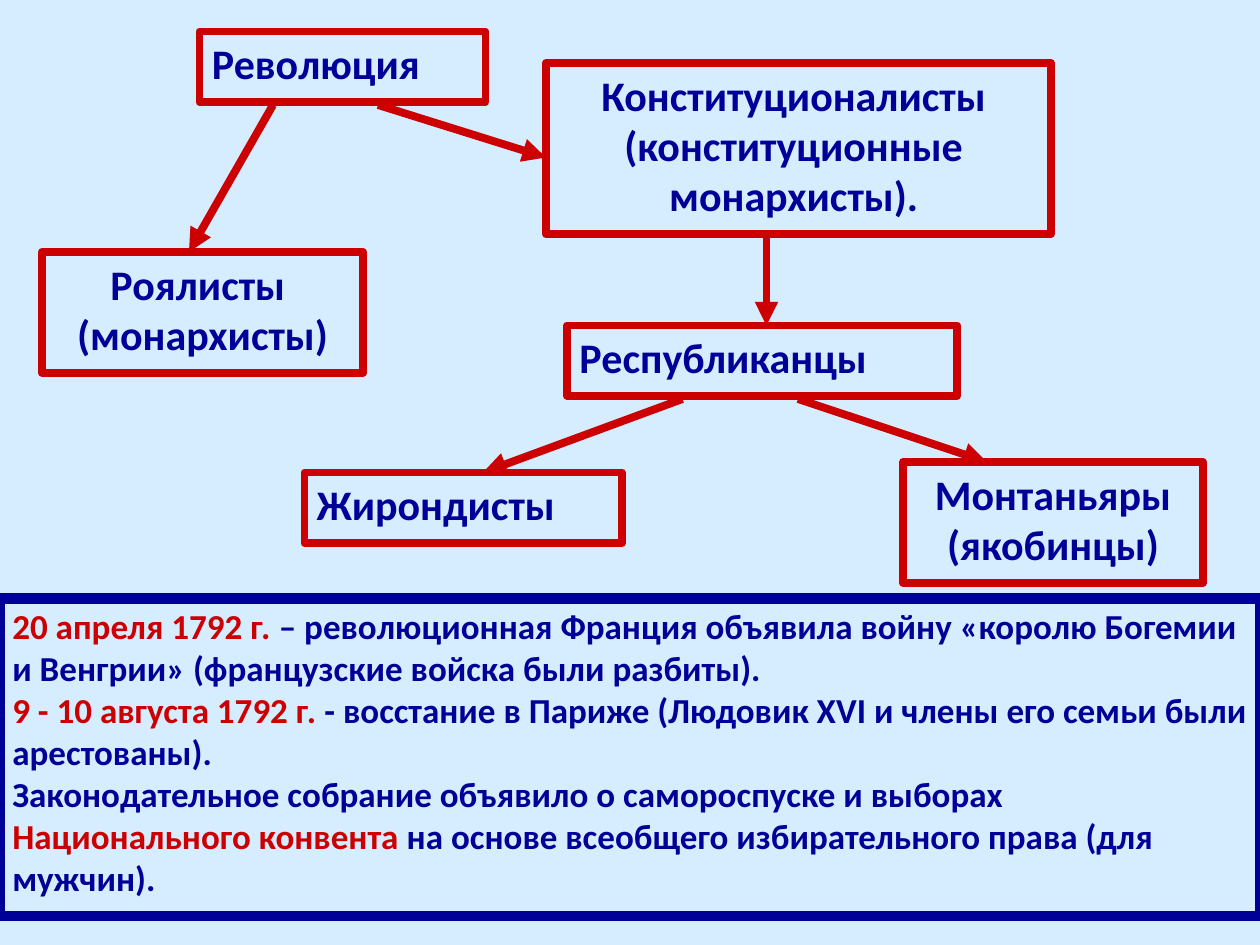
from dataclasses import dataclass

from lxml import etree
from pptx import Presentation
from pptx.dml.color import RGBColor
from pptx.enum.shapes import MSO_CONNECTOR, MSO_SHAPE
from pptx.enum.text import MSO_ANCHOR, PP_ALIGN
from pptx.oxml.ns import qn
from pptx.slide import Slide
from pptx.util import Pt

RECTANGLE = MSO_SHAPE.RECTANGLE
STRAIGHT = MSO_CONNECTOR.STRAIGHT
TOP = MSO_ANCHOR.TOP
LEFT, CENTER = PP_ALIGN.LEFT, PP_ALIGN.CENTER

SKY = RGBColor(0xD6, 0xEC, 0xFF)
NAVY = RGBColor(0x00, 0x00, 0x99)
RED = RGBColor(0xCC, 0x00, 0x00)

FONT = "Calibri"
BLANK_LAYOUT = 6
LINE_WIDTH = 4.5
LINE_HEIGHT = 28.8
BOX_PADDING = 11.5


@dataclass(frozen=True)
class TextRun:
    text: str
    color: RGBColor = NAVY


@dataclass(frozen=True)
class Box:
    left: float
    top: float
    width: float
    lines: tuple[str, ...]

    @property
    def height(self) -> float:
        return BOX_PADDING + LINE_HEIGHT * len(self.lines)


@dataclass(frozen=True)
class Arrow:
    start: tuple[float, float]
    end: tuple[float, float]


PARTIES = (
    Box(114, 18, 163.5, ("Революция",)),
    Box(24, 144, 183.5, ("Роялисты ", "(монархисты)")),
    Box(312, 36, 288.5,
        ("Конституционалисты ", "(конституционные ", "монархисты). ")),
    Box(324, 186, 223, ("Республиканцы",)),
    Box(174, 270, 181.5, ("Жирондисты",)),
    Box(516, 264, 171.5, ("Монтаньяры", "(якобинцы)")),
)

ARROWS = (
    Arrow((156, 60), (108, 144)),
    Arrow((216, 60), (312, 90)),
    Arrow((438, 132), (438, 186)),
    Arrow((390, 228), (276, 270)),
    Arrow((456, 228), (564, 264)),
)

EVENTS = (
    (TextRun("20 апреля 1792 г.", RED),
     TextRun(" – революционная Франция объявила войну «королю Богемии "
             "и Венгрии» (французские войска были разбиты).")),
    (TextRun("9 - 10 августа 1792 г.", RED),
     TextRun(" - восстание в Париже (Людовик XVI и члены его семьи были "
             "арестованы).")),
    (TextRun("Законодательное собрание объявило о самороспуске и выборах "),
     TextRun("Национального конвента", RED),
     TextRun(" на основе всеобщего избирательного права (для мужчин).")),
)


def add_framed_text(
    slide: Slide,
    frame: tuple[float, float, float, float],
    paragraphs: tuple[tuple[TextRun, ...], ...],
    size: float,
    alignment: PP_ALIGN,
    line_color: RGBColor,
    line_width: float,
) -> None:
    shape = slide.shapes.add_shape(RECTANGLE, *map(Pt, frame))
    shape.shadow.inherit = False
    shape.fill.background()
    shape.line.color.rgb = line_color
    shape.line.width = Pt(line_width)
    text_frame = shape.text_frame
    text_frame.word_wrap = True
    text_frame.vertical_anchor = TOP
    for index, runs in enumerate(paragraphs):
        paragraph = (text_frame.add_paragraph() if index
                     else text_frame.paragraphs[0])
        paragraph.alignment = alignment
        for text_run in runs:
            run = paragraph.add_run()
            run.text = text_run.text
            run.font.name = FONT
            run.font.size = Pt(size)
            run.font.bold = True
            run.font.color.rgb = text_run.color


def add_party(slide: Slide, box: Box) -> None:
    """Draw a red box: a single line stands left, several are centred."""
    add_framed_text(
        slide,
        (box.left, box.top, box.width, box.height),
        tuple((TextRun(line),) for line in box.lines),
        24,
        CENTER if len(box.lines) > 1 else LEFT,
        RED,
        LINE_WIDTH,
    )


def add_arrow(slide: Slide, arrow: Arrow) -> None:
    connector = slide.shapes.add_connector(
        STRAIGHT, *map(Pt, arrow.start + arrow.end))
    connector.line.color.rgb = RED
    connector.line.width = Pt(LINE_WIDTH)
    line = connector.line._get_or_add_ln()
    etree.SubElement(line, qn("a:tailEnd"), type="triangle")
    etree.SubElement(connector._element.spPr, qn("a:effectLst"))


def main() -> None:
    presentation = Presentation()
    presentation.slide_width = Pt(720)
    presentation.slide_height = Pt(540)
    slide = presentation.slides.add_slide(
        presentation.slide_layouts[BLANK_LAYOUT])
    slide.background.fill.solid()
    slide.background.fill.fore_color.rgb = SKY

    add_framed_text(slide, (0, 342, 720, 181.5), EVENTS, 20, LEFT, NAVY, 6)
    for box in PARTIES:
        add_party(slide, box)
    for arrow in ARROWS:
        add_arrow(slide, arrow)

    presentation.save("out.pptx")


if __name__ == "__main__":
    main()
